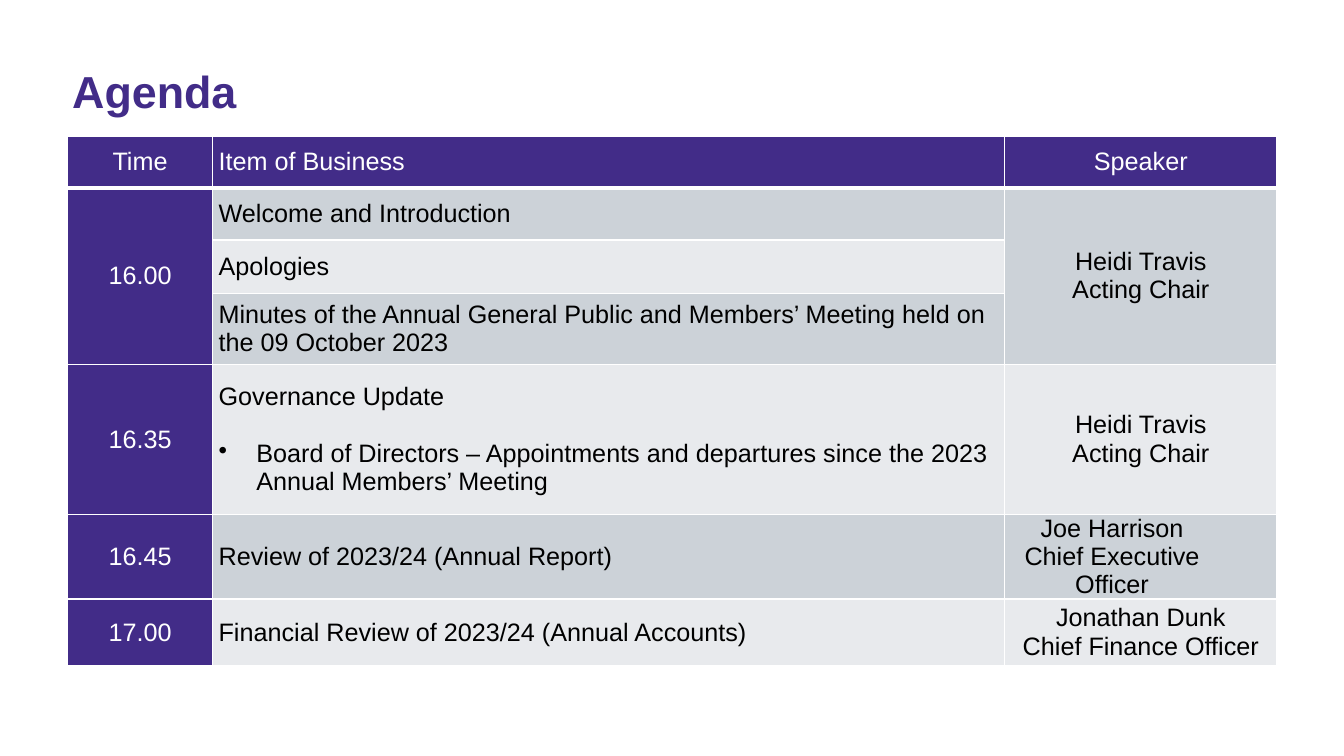
from pptx import Presentation, util as u
from pptx.dml.color import RGBColor
from pptx.enum import text
from pptx.oxml import parse_xml
from pptx.oxml.ns import nsdecls

PLUM, WHITE, BLACK = "422C88", "FFFFFF", "000000"
BANDS = "CCD2D8", "E8EAED"
MID, LEFT = text.PP_ALIGN.CENTER, text.PP_ALIGN.LEFT
COLS = 3.66, 19.96, 6.86
TALL = 1.3, 1.32, 1.35, 1.78, 3.78, 2.06, 1.68
CHAIR = "Heidi Travis\nActing Chair"
ROWS = [
    ("Time", "Item of Business", "Speaker"),
    ("16.00", "Welcome and Introduction", CHAIR),
    ("", "Apologies", ""),
    ("", "Minutes of the Annual General Public and Members’ Meeting held on the 09 October 2023", ""),
    ("16.35", "Governance Update\nBoard of Directors – Appointments and departures since the 2023 Annual Members’ Meeting", CHAIR),
    ("16.45", "Review of 2023/24 (Annual Report)", "Joe Harrison\nChief Executive Officer"),
    ("17.00", "Financial Review of 2023/24 (Annual Accounts)", "Jonathan Dunk\nChief Finance Officer"),
]


def tint(code):
    return RGBColor.from_string(code)


def apply(item, form):
    for name, value in form.items():
        setattr(item, name, value)


class Deck:
    """Hold the text style and the current slide."""

    def __init__(self):
        self.show = Presentation()
        apply(self.show, {"slide_width": u.Cm(33.87), "slide_height": u.Cm(19.05)})
        self.slide = self.show.slides.add_slide(self.show.slide_layouts[6])
        self.font = {"name": "Arial", "size": u.Pt(18), "bold": False}

    def label(self, frame, words, color, align=LEFT, **form):
        frame.text = words
        for para in frame.paragraphs:
            para.alignment = align
            for run in para.runs:
                apply(run.font, self.font | form)
                run.font.color.rgb = tint(color)

    def title(self, words, left, top, width, height):
        box = self.slide.shapes.add_textbox(*map(u.Cm, (left, top, width, height)))
        box.text_frame.word_wrap = True
        self.label(box.text_frame, words, PLUM, size=u.Pt(32), bold=True)

    def edge(self, cell, head):
        props = cell._tc.get_or_add_tcPr()
        for side in "LRTB":
            wide = u.Pt(3 if head and side == "B" else 1)
            props.append(parse_xml(
                f'<a:ln{side} {nsdecls("a")} w="{wide}"><a:solidFill>'
                f'<a:srgbClr val="{WHITE}"/></a:solidFill></a:ln{side}>'))

    def bullet(self, para):
        props = para._p.get_or_add_pPr()
        props.set("marL", str(u.Cm(0.95)))
        props.set("indent", str(-u.Cm(0.95)))
        props.append(parse_xml(f'<a:buChar {nsdecls("a")} char="•"/>'))
        para.space_before = u.Pt(20)

    def table(self, rows, left, top):
        size = left, top, sum(COLS), sum(TALL)
        grid = self.slide.shapes.add_table(len(rows), len(COLS), *map(u.Cm, size)).table
        apply(grid, {"first_row": False, "horz_banding": False})
        for col, wide in zip(grid.columns, COLS):
            col.width = u.Cm(wide)
        for row, high in zip(grid.rows, TALL):
            row.height = u.Cm(high)
        pad = {"margin_left": u.Cm(0.15), "margin_right": u.Cm(0.15),
               "margin_top": 0, "margin_bottom": 0,
               "vertical_anchor": text.MSO_ANCHOR.MIDDLE}
        for i, row in enumerate(rows):
            for j, words in enumerate(row):
                cell = grid.cell(i, j)
                dark = i == 0 or j == 0
                apply(cell, pad)
                self.edge(cell, i == 0)
                cell.fill.solid()
                cell.fill.fore_color.rgb = tint(PLUM if dark else BANDS[(i + 1) % 2])
                self.label(cell.text_frame, words, WHITE if dark else BLACK,
                           LEFT if j == 1 else MID)
        for j in (0, 2):
            grid.cell(1, j).merge(grid.cell(3, j))
        self.bullet(grid.cell(4, 1).text_frame.paragraphs[1])
        chief = grid.cell(5, 2).text_frame.paragraphs[0]
        chief._p.get_or_add_pPr().set("marR", str(u.Cm(1.45)))


def main():
    deck = Deck()
    deck.table(ROWS, 1.7, 3.43)
    deck.title("Agenda", 1.57, 1.47, 22.86, 2.08)
    deck.show.save("out.pptx")


if __name__ == "__main__":
    main()
